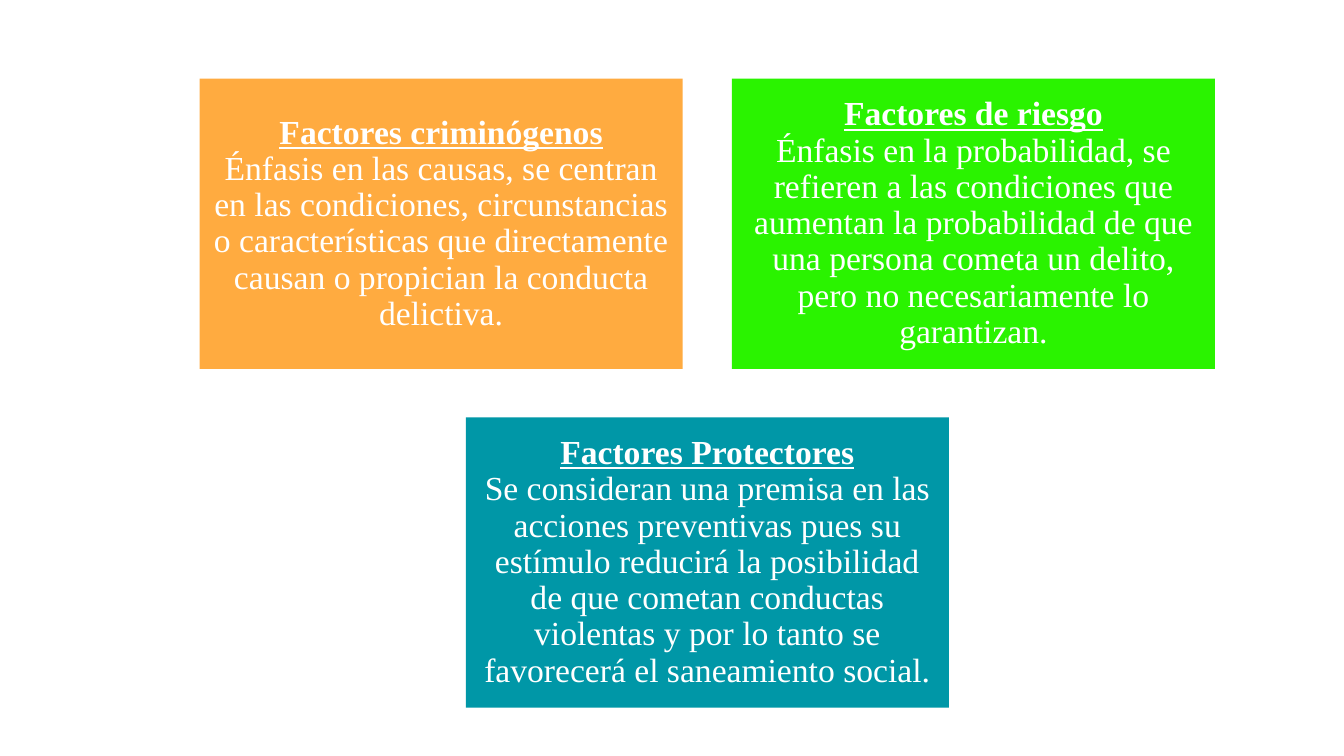
from pptx import Presentation
from pptx.dml.color import RGBColor
from pptx.enum import shapes, text
from pptx.util import Inches, Pt

COLORS = {"orange": "FFAB40", "green": "2AF300", "teal": "0097A7", "white": "FFFFFF"}
FONT = "Times New Roman"
LEFT, TOP = 1.98, 0.78
WIDTH, HEIGHT = 4.79, 2.88
COLUMN_STEP, ROW_STEP = 5.28, 3.36

FACTORS = [
    (0, 0, "orange", "Factores criminógenos",
     "Énfasis en las causas, se centran en las condiciones, circunstancias o "
     "características que directamente causan o propician la conducta delictiva."),
    (1, 0, "green", "Factores de riesgo",
     "Énfasis en la probabilidad, se refieren a las condiciones que aumentan la "
     "probabilidad de que una persona cometa un delito, pero no necesariamente lo garantizan."),
    (0.5, 1, "teal", "Factores Protectores",
     "Se consideran una premisa en las acciones preventivas pues su estímulo reducirá la "
     "posibilidad de que cometan conductas violentas y por lo tanto se favorecerá el "
     "saneamiento social."),
]


def color(name):
    return RGBColor.from_string(COLORS[name])


def add_factor(page, column, row, fill, title, description):
    box = page.shapes.add_shape(
        shapes.MSO_SHAPE.RECTANGLE,
        Inches(LEFT + column * COLUMN_STEP), Inches(TOP + row * ROW_STEP),
        Inches(WIDTH), Inches(HEIGHT))
    box.shadow.inherit = False
    box.fill.solid()
    box.fill.fore_color.rgb = color(fill)
    box.line.fill.background()

    frame = box.text_frame
    frame.word_wrap = True
    frame.vertical_anchor = text.MSO_ANCHOR.MIDDLE
    frame.margin_left = frame.margin_right = Inches(0.1)
    frame.margin_top = frame.margin_bottom = Inches(0.1)

    para = frame.paragraphs[0]
    para.text = f"{title}\v{description}"
    para.alignment = text.PP_ALIGN.CENTER
    para.line_spacing = 0.9
    for index, span in enumerate(para.runs):
        span.font.name = FONT
        span.font.size = Pt(24)
        span.font.color.rgb = color("white")
        span.font.bold = span.font.underline = index == 0


def main():
    """Build the slide that compares the three kinds of factors."""
    deck = Presentation()
    deck.slide_width, deck.slide_height = Inches(13.33), Inches(7.5)
    page = deck.slides.add_slide(deck.slide_layouts[6])
    for factor in FACTORS:
        add_factor(page, *factor)
    deck.save("out.pptx")


if __name__ == "__main__":
    main()
